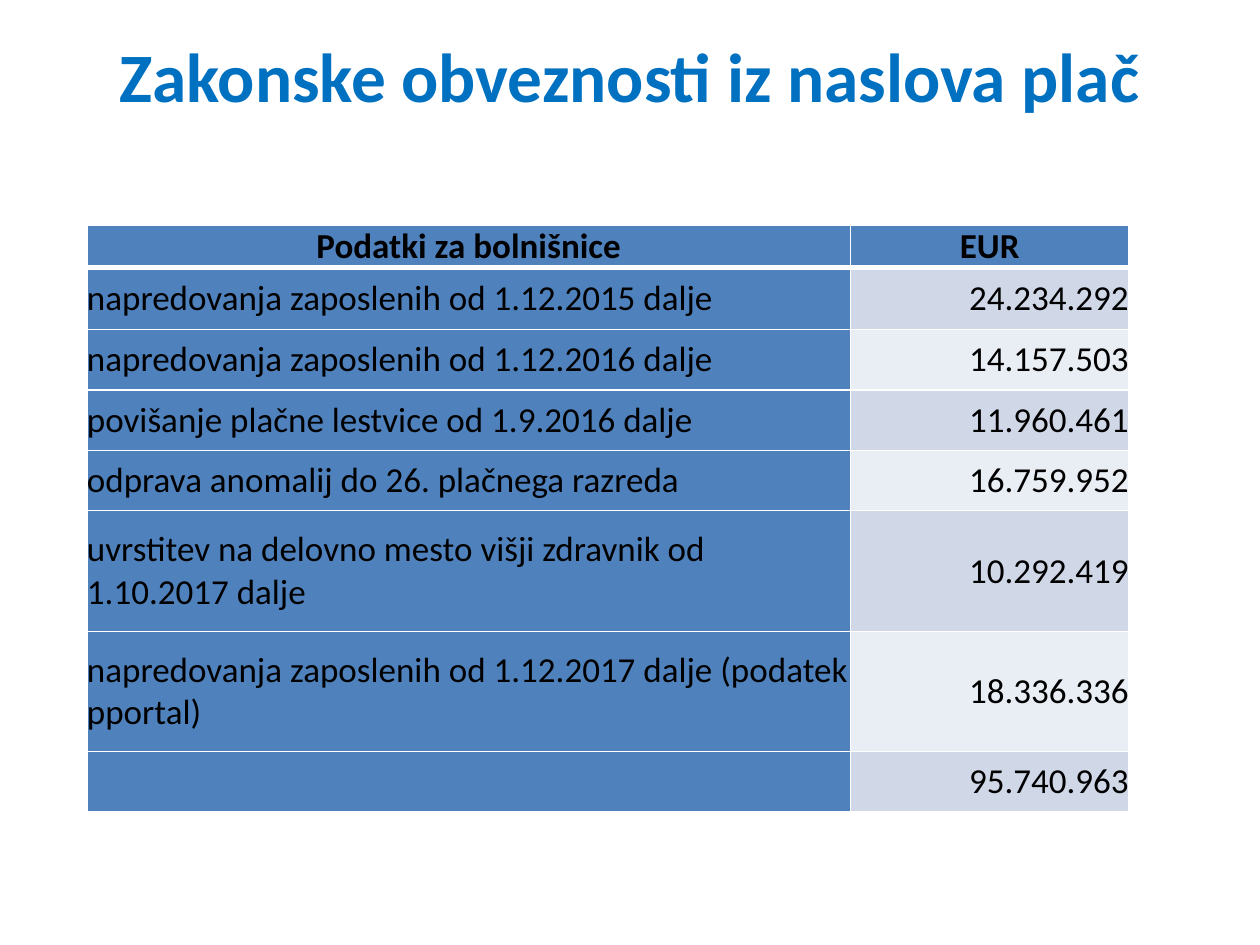
from lxml import etree
from pptx import Presentation
from pptx import util as u
from pptx.dml.color import RGBColor
from pptx.enum import text
from pptx.oxml.ns import qn

FONT = "Calibri"
BLUE = RGBColor(0x00, 0x70, 0xC0)
STEEL = RGBColor(0x4F, 0x81, 0xBD)
BANDS = RGBColor(0xD0, 0xD8, 0xE8), RGBColor(0xE9, 0xED, 0xF4)
BLACK = RGBColor(0, 0, 0)
WHITE = RGBColor(0xFF, 0xFF, 0xFF)

LEFT, MID, RIGHT = text.PP_ALIGN.LEFT, text.PP_ALIGN.CENTER, text.PP_ALIGN.RIGHT

HEAD = "Podatki za bolnišnice", "EUR"
COSTS = [
    ("napredovanja zaposlenih od 1.12.2015 dalje", "24.234.292"),
    ("napredovanja zaposlenih od 1.12.2016 dalje", "14.157.503"),
    ("povišanje plačne lestvice od 1.9.2016 dalje", "11.960.461"),
    ("odprava anomalij do 26. plačnega razreda", "16.759.952"),
    ("uvrstitev na delovno mesto višji zdravnik od 1.10.2017 dalje", "10.292.419"),
    ("napredovanja zaposlenih od 1.12.2017 dalje (podatek pportal)", "18.336.336"),
    ("", "95.740.963"),
]
WIDTHS = 6.06, 2.21
HEIGHTS = 0.26, 0.49, 0.48, 0.48, 0.48, 0.96, 0.95, 0.48


def write(frame, words, size=20, color=BLACK, bold=False, align=LEFT):
    par = frame.paragraphs[0]
    par.alignment = align
    if words:
        run = par.add_run()
        run.text = words
        font = run.font
        font.name, font.size, font.bold = FONT, u.Pt(size), bold
        font.color.rgb = color


def add_title(slide, words):
    box = slide.shapes.add_textbox(u.Inches(0.5), u.Inches(0.14), u.Inches(9), u.Inches(0.91))
    frame = box.text_frame
    frame.word_wrap = True
    frame.vertical_anchor = text.MSO_ANCHOR.MIDDLE
    write(frame, words, size=39.6, color=BLUE, bold=True, align=MID)


def add_edges(cell, **points):
    props = cell._tc.get_or_add_tcPr()
    for side in "LRTB":
        line = etree.SubElement(props, qn(f"a:ln{side}"), w=str(u.Pt(points.get(side, 1))))
        fill = etree.SubElement(line, qn("a:solidFill"))
        etree.SubElement(fill, qn("a:srgbClr"), val=str(WHITE))


def fill_cell(cell, words, color, edges, **form):
    cell.margin_left = cell.margin_right = cell.margin_top = cell.margin_bottom = 0
    cell.vertical_anchor = text.MSO_ANCHOR.MIDDLE
    add_edges(cell, **edges)
    cell.fill.solid()
    cell.fill.fore_color.rgb = color
    write(cell.text_frame, words, **form)


def add_costs(slide):
    rows = [HEAD] + COSTS
    table = slide.shapes.add_table(
        len(rows), len(HEAD), u.Inches(0.69), u.Inches(1.79),
        u.Inches(sum(WIDTHS)), u.Inches(sum(HEIGHTS))).table
    for col, width in zip(table.columns, WIDTHS):
        col.width = u.Inches(width)
    for row, height in zip(table.rows, HEIGHTS):
        row.height = u.Inches(height)

    # Header row, with a heavier line below it
    for c, words in enumerate(HEAD):
        fill_cell(table.cell(0, c), words, STEEL, {"B": 3}, bold=True, align=MID)

    # Labels on the left, banded amounts on the right
    for r, (label, sum_) in enumerate(COSTS, 1):
        edges = {"T": 3} if r == 1 else {}
        fill_cell(table.cell(r, 0), label, STEEL, edges)
        fill_cell(table.cell(r, 1), sum_, BANDS[(r - 1) % 2], edges, align=RIGHT)


def main():
    deck = Presentation()
    deck.slide_width, deck.slide_height = u.Inches(10), u.Inches(7.5)
    slide = deck.slides.add_slide(deck.slide_layouts[6])
    add_title(slide, "Zakonske obveznosti iz naslova plač")
    add_costs(slide)
    deck.save("out.pptx")


if __name__ == "__main__":
    main()
